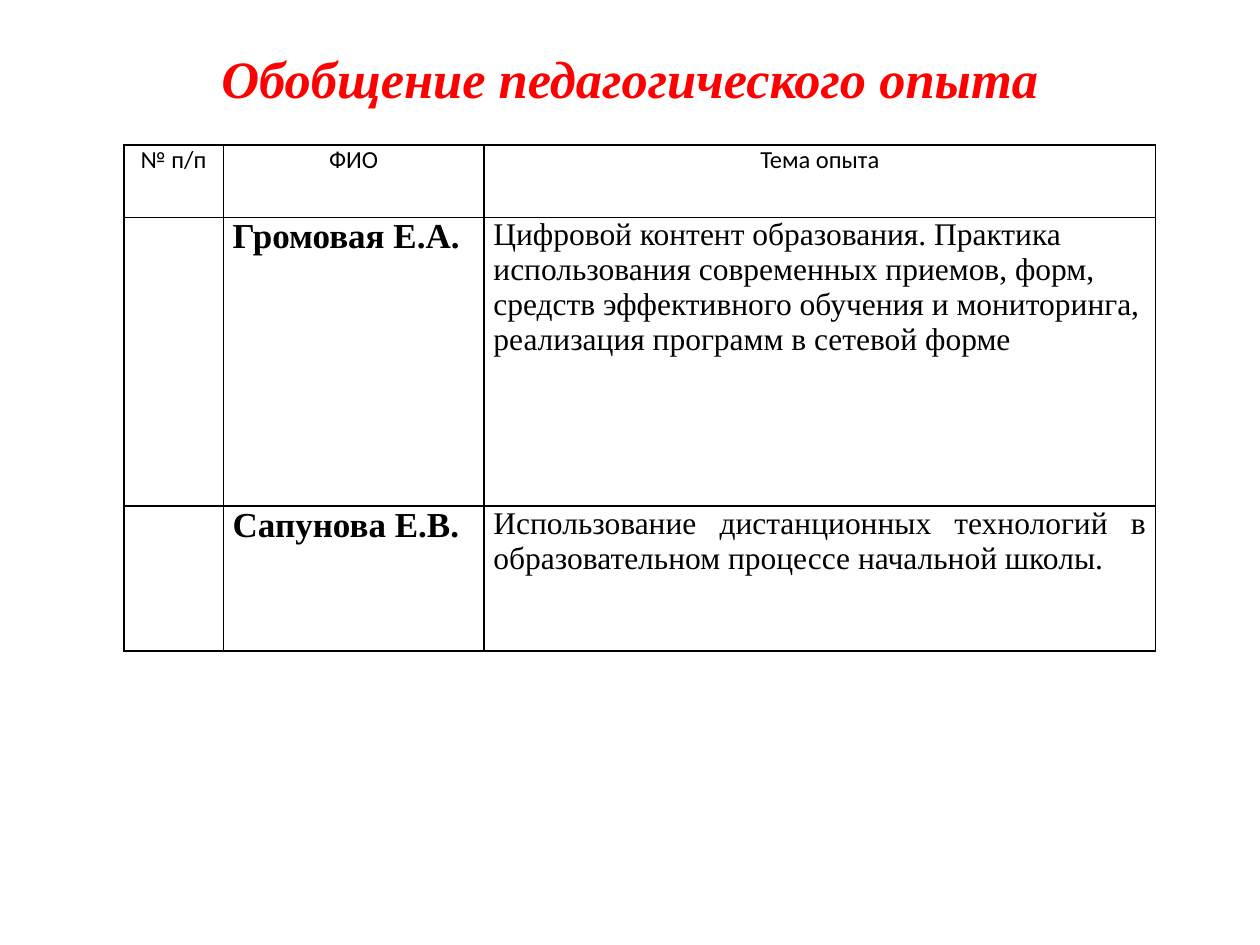
from lxml import etree
from pptx import Presentation
from pptx.dml.color import RGBColor
from pptx.enum import text
from pptx.oxml import ns
from pptx.util import Pt

BLACK = RGBColor(0x00, 0x00, 0x00)
RED = RGBColor(0xFF, 0x00, 0x00)
ALIGN = text.PP_ALIGN

HEADING = dict(name="Times New Roman", size=Pt(30), bold=True, italic=True)
LABEL = dict(name="Calibri", size=Pt(14), bold=False)
TEACHER = dict(name="Times New Roman", size=Pt(20), bold=True)
TOPIC = dict(name="Times New Roman", size=Pt(18), bold=False)

COLUMNS = (56.8, 149, 383.8)
ROWS = (41.4, 165, 82.8)
HEADERS = ("№ п/п", "ФИО", "Тема опыта")
EXPERIENCE = (
    ("Громовая Е.А.",
     "Цифровой контент образования. Практика использования современных "
     "приемов, форм, средств эффективного обучения и мониторинга, "
     "реализация программ в сетевой форме", ALIGN.LEFT),
    ("Сапунова Е.В.",
     "Использование дистанционных технологий в образовательном процессе "
     "начальной школы.", ALIGN.JUSTIFY),
)


def apply(target, values):
    """Set each attribute named in values on the target."""
    for attribute, value in values.items():
        setattr(target, attribute, value)


def write(frame, wording, font, color, align):
    """Write one formatted paragraph into a text frame."""
    paragraph = frame.paragraphs[0]
    paragraph.alignment = align
    run = paragraph.add_run()
    run.text = wording
    apply(run.font, font)
    run.font.color.rgb = color


def add_solid_fill(parent):
    """Add a solid black fill to an XML element."""
    fill = etree.SubElement(parent, ns.qn("a:solidFill"))
    etree.SubElement(fill, ns.qn("a:srgbClr"), val=str(BLACK))


def prepare_cell(cell, top=0):
    """Give a cell its margins, clear fill and thin black borders."""
    apply(cell, dict(margin_left=Pt(5.4), margin_right=Pt(5.4),
                     margin_top=Pt(top), margin_bottom=Pt(0)))
    cell.fill.background()
    properties = cell._tc.get_or_add_tcPr()
    for position, side in enumerate(("lnL", "lnR", "lnT", "lnB")):
        line = etree.Element(ns.qn(f"a:{side}"), w=str(Pt(1)))
        add_solid_fill(line)
        properties.insert(position, line)


def fill_cell(cell, wording, font, align):
    """Prepare a cell and write its wording."""
    prepare_cell(cell)
    write(cell.text_frame, wording, font, BLACK, align)


def number_cell(cell):
    """Prepare a cell that holds only an automatic list number."""
    prepare_cell(cell, top=3)
    paragraph = cell.text_frame.paragraphs[0]._p
    properties = paragraph.get_or_add_pPr()
    properties.set("marL", str(Pt(27)))
    properties.set("indent", str(-Pt(27)))
    etree.SubElement(properties, ns.qn("a:buFont"), typeface=LABEL["name"])
    etree.SubElement(properties, ns.qn("a:buAutoNum"), type="arabicPeriod")
    ending = etree.SubElement(paragraph, ns.qn("a:endParaRPr"),
                              sz=str(int(LABEL["size"].pt * 100)), b="0")
    add_solid_fill(ending)
    etree.SubElement(ending, ns.qn("a:latin"), typeface=LABEL["name"])


def place_title(slide, left, top, width, height):
    """Place the heading in the title placeholder."""
    title = slide.shapes.title
    apply(title, dict(left=Pt(left), top=Pt(top),
                      width=Pt(width), height=Pt(height)))
    apply(title.text_frame, dict(vertical_anchor=text.MSO_ANCHOR.TOP,
                                 margin_top=Pt(3.9), word_wrap=True,
                                 auto_size=text.MSO_AUTO_SIZE.NONE))
    write(title.text_frame, "Обобщение педагогического опыта",
          HEADING, RED, ALIGN.CENTER)


def place_experience(slide, left, top):
    """Place the table of teachers and their topics."""
    table = slide.shapes.add_table(
        len(ROWS), len(COLUMNS), Pt(left), Pt(top),
        Pt(sum(COLUMNS)), Pt(sum(ROWS))).table
    apply(table, dict(first_row=False, horz_banding=False))
    for column, width in zip(table.columns, COLUMNS):
        column.width = Pt(width)
    for row, height in zip(table.rows, ROWS):
        row.height = Pt(height)
    for cell, header in zip(table.rows[0].cells, HEADERS):
        fill_cell(cell, header, LABEL, ALIGN.CENTER)
    for index, (teacher, topic, align) in enumerate(EXPERIENCE, start=1):
        order_cell, teacher_cell, topic_cell = table.rows[index].cells
        number_cell(order_cell)
        fill_cell(teacher_cell, teacher, TEACHER, ALIGN.JUSTIFY)
        fill_cell(topic_cell, topic, TOPIC, align)


def main():
    """Build the slide and save it."""
    deck = Presentation()
    apply(deck, dict(slide_width=Pt(720), slide_height=Pt(540)))
    slide = deck.slides.add_slide(deck.slide_layouts.get_by_name("Title Only"))
    place_title(slide, 0, 22.3, 720, 73.4)
    place_experience(slide, 70.8, 82.9)
    deck.save("out.pptx")


if __name__ == "__main__":
    main()
